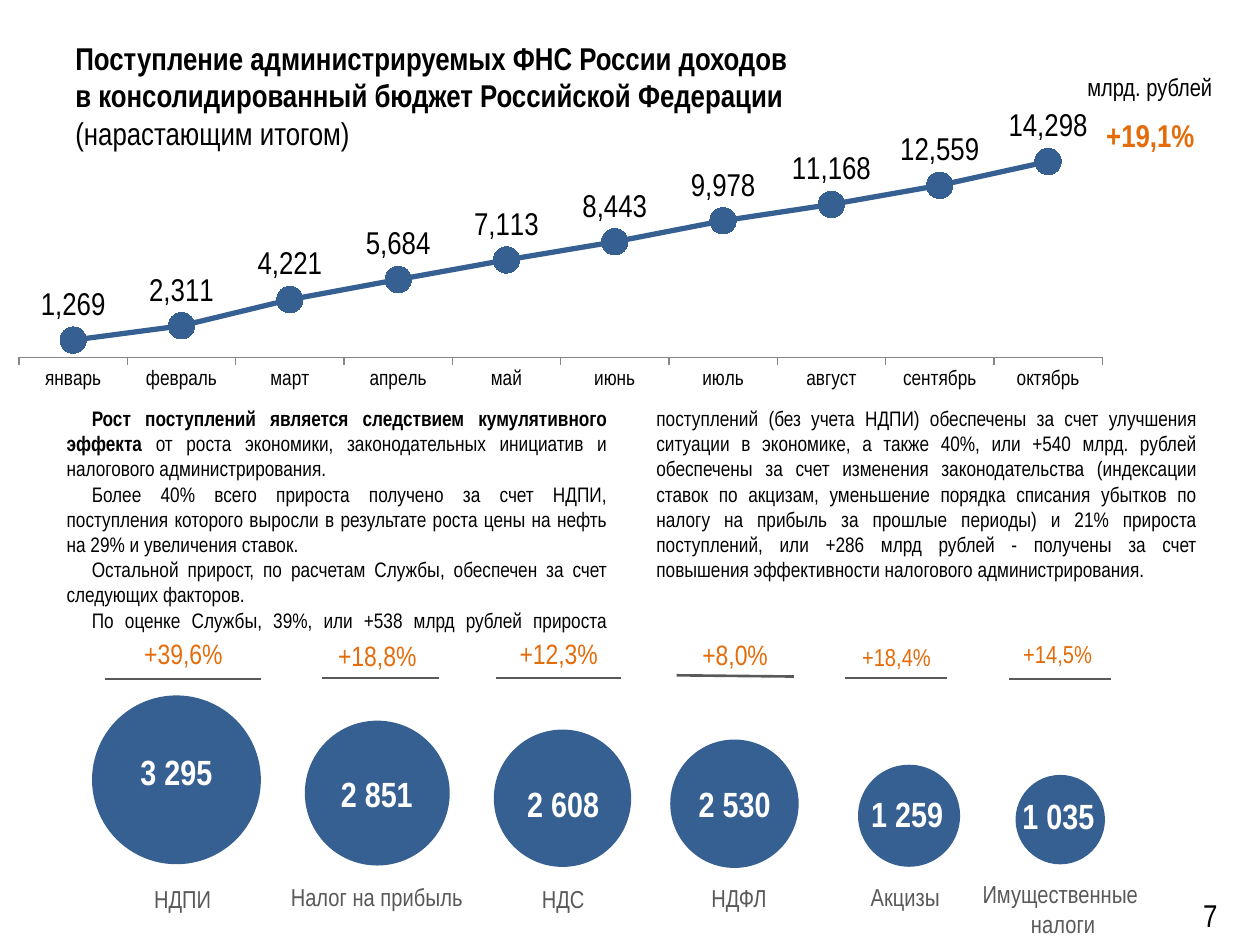
from dataclasses import dataclass

from lxml import etree
from pptx import Presentation
from pptx.chart.data import CategoryChartData
from pptx.dml.color import RGBColor
from pptx.enum.chart import (XL_CHART_TYPE, XL_LABEL_POSITION,
                             XL_MARKER_STYLE, XL_TICK_MARK)
from pptx.enum.shapes import MSO_CONNECTOR, MSO_SHAPE
from pptx.enum.text import MSO_ANCHOR, MSO_AUTO_SIZE, PP_ALIGN
from pptx.oxml import parse_xml
from pptx.oxml.ns import nsdecls, qn
from pptx.util import Pt

LINE = XL_CHART_TYPE.LINE_MARKERS_STACKED
ABOVE = XL_LABEL_POSITION.ABOVE
ROUND = XL_MARKER_STYLE.CIRCLE
OUT, NONE = XL_TICK_MARK.OUTSIDE, XL_TICK_MARK.NONE
STRAIGHT = MSO_CONNECTOR.STRAIGHT
OVAL = MSO_SHAPE.OVAL
TOP, MIDDLE = MSO_ANCHOR.TOP, MSO_ANCHOR.MIDDLE
GROW, FIXED = MSO_AUTO_SIZE.SHAPE_TO_FIT_TEXT, MSO_AUTO_SIZE.NONE
LEFT, CENTER, JUSTIFY = PP_ALIGN.LEFT, PP_ALIGN.CENTER, PP_ALIGN.JUSTIFY


@dataclass
class Theme:
    font: str = "Arial Narrow"
    ink: str = "000000"
    blue: str = "376092"
    gray: str = "595959"
    accent: str = "E46C0A"
    white: str = "FFFFFF"
    small: int = 12
    label: int = 14
    rate: int = 16
    head: int = 18
    value: int = 20


def rgb(code):
    return RGBColor.from_string(code)


def assign(target, values):
    for key, value in values.items():
        setattr(target, key, value)


class Board:
    def __init__(self, slide, theme):
        self.slide, self.theme = slide, theme

    def style(self, font, size, color, bold=False):
        assign(font, {"name": self.theme.font, "size": Pt(size), "bold": bold})
        font.color.rgb = rgb(color)

    def text(self, box, paras, size, color, bold=False, align=LEFT,
             anchor=TOP, wrap=False, fit=GROW, pad=(7.2, 3.6)):
        """Each paragraph is a string or a list of (text, bold) runs."""
        frame = self.slide.shapes.add_textbox(*map(Pt, box)).text_frame
        across, down = map(Pt, pad)
        assign(frame, {"word_wrap": wrap, "auto_size": fit,
                       "vertical_anchor": anchor,
                       "margin_left": across, "margin_right": across,
                       "margin_top": down, "margin_bottom": down})
        for i, runs in enumerate(paras):
            para = frame.add_paragraph() if i else frame.paragraphs[0]
            para.alignment = align
            for words, strong in [(runs, bold)] if isinstance(runs, str) else runs:
                for j, part in enumerate(words.split("\n")):
                    if j:
                        para.add_line_break()
                    if part:
                        run = para.add_run()
                        run.text = part
                        self.style(run.font, size, color, strong)
        return frame

    def label(self, mid, top, width, height, paras, size, color):
        self.text((mid - width / 2, top, width, height), paras, size, color,
                  align=CENTER)

    def circle(self, left, top, size):
        disc = self.slide.shapes.add_shape(OVAL, *map(Pt, (left, top, size, size)))
        disc.shadow.inherit = False
        disc.fill.solid()
        disc.fill.fore_color.rgb = rgb(self.theme.blue)
        disc.line.fill.background()

    def rule(self, *ends):
        line = self.slide.shapes.add_connector(STRAIGHT, *map(Pt, ends))
        line.line.color.rgb = rgb(self.theme.gray)
        line.line.width = Pt(1.5)
        etree.SubElement(line._element.spPr, qn("a:effectLst"))

    def chart(self, box, names, values):
        look = self.theme
        data = CategoryChartData(number_format="#,##0")
        data.categories = names
        data.add_series("Series 1", values)
        chart = self.slide.shapes.add_chart(LINE, *map(Pt, box), data).chart
        assign(chart, {"has_legend": False, "has_title": False})
        self.style(chart.font, look.head, look.ink)

        # Axes
        axis = chart.value_axis
        assign(axis, {"visible": False, "has_major_gridlines": False,
                      "minimum_scale": -200, "maximum_scale": 16000})
        axis = chart.category_axis
        assign(axis, {"major_tick_mark": OUT, "minor_tick_mark": NONE})
        self.style(axis.tick_labels.font, look.small, look.ink)
        axis.format.line.color.rgb = rgb("868686")

        # Series and labels
        plot = chart.plots[0]
        plot.vary_by_categories = False
        series = plot.series[0]
        series.smooth = False
        series.format.line.color.rgb = rgb(look.blue)
        series.format.line.width = Pt(3)
        assign(series.marker, {"style": ROUND, "size": 15})
        mark = series.marker.format
        mark.fill.solid()
        mark.fill.fore_color.rgb = rgb(look.blue)
        mark.line.color.rgb = rgb(look.white)
        labels = series.data_labels
        assign(labels, {"show_value": True, "position": ABOVE,
                        "number_format": "#,##0",
                        "number_format_is_linked": False})
        self.style(labels.font, look.head, look.ink)

        # Plot area
        area = chart._chartSpace.chart.plotArea
        for old in area.findall(qn("c:layout")):
            area.remove(old)
        sizes = {"x": 0.017, "y": 0.1, "w": 0.966, "h": 0.773}
        parts = '<c:layoutTarget val="inner"/><c:xMode val="edge"/><c:yMode val="edge"/>'
        parts += "".join(f'<c:{k} val="{v}"/>' for k, v in sizes.items())
        area.insert(0, parse_xml(f'<c:layout {nsdecls("c")}><c:manualLayout>'
                                 f'{parts}</c:manualLayout></c:layout>'))


MONTHS = ["январь", "февраль", "март", "апрель", "май", "июнь", "июль",
          "август", "сентябрь", "октябрь"]
INCOME = [1269, 2311, 4221, 5684, 7113, 8443, 9978, 11168, 12559, 14298]

BODY = [
    [("Рост поступлений является следствием кумулятивного эффекта", True),
     (" от роста экономики, законодательных инициатив и налогового "
      "администрирования.", False)],
    "Более 40% всего прироста получено за счет НДПИ, поступления которого "
    "выросли в результате роста цены на нефть на 29% и увеличения ставок.",
    "Остальной прирост, по расчетам Службы, обеспечен за счет следующих факторов.",
    "По оценке Службы, 39%, или +538 млрд рублей прироста поступлений (без учета "
    "НДПИ) обеспечены за счет улучшения ситуации в экономике, а также 40%, или "
    "+540 млрд. рублей обеспечены за счет изменения законодательства (индексации "
    "ставок по акцизам, уменьшение порядка списания убытков по налогу на прибыль "
    "за прошлые периоды) и 21% прироста поступлений, или +286 млрд рублей - "
    "получены за счет повышения эффективности налогового администрирования.",
]

# Circle; value (text, centre, size); rate (text, centre, top, width, type);
# name (lines, centre, top, width); rule ends
TAXES = [
    ((52.6, 397.4, 96.5), ("3 295", 100.8, 440.7, 70.6, 70.6),
     ("+39,6%", 104.8, 360, 59.8, 16), (["НДПИ"], 104.4, 501.8, 47.5),
     (59.8, 388.1, 149, 388.1)),
    ((174.2, 411.8, 82.8), ("2 851", 215.3, 453.6, 70.6, 70.6),
     ("+18,8%", 215.6, 361.4, 59.8, 16),
     (["Налог на прибыль"], 215.3, 500.4, 113.8),
     (184.3, 387.4, 250.6, 387.4)),
    ((282.2, 416.9, 78.5), ("2 608", 321.8, 459.4, 70.6, 70.6),
     ("+12,3%", 319.3, 360, 59.8, 16), (["НДС"], 321.8, 501.8, 38.9),
     (283.7, 387.4, 355, 387.4)),
    ((383, 422.6, 73.4), ("2 530", 419.8, 459.4, 70.6, 70.6),
     ("+8,0%", 420.1, 360.7, 52.6, 16), (["НДФЛ"], 422.3, 501.1, 46.8),
     (386.6, 385.9, 453.6, 386.6)),
    ((490.3, 437, 58.3), ("1 259", 518.4, 465.1, 70.6, 70.6),
     ("+18,4%", 512.3, 363.6, 54, 14), (["Акцизы"], 517.3, 500.4, 54),
     (483.1, 387.4, 541.4, 387.4)),
    ((580.3, 442.8, 51.1), ("1 035", 604.8, 465.8, 56.2, 63.4),
     ("+14,5%", 604.4, 361.4, 54, 14),
     (["Имущественные", " налоги"], 605.9, 499, 104.4),
     (576.7, 388.1, 635, 388.1)),
]


def main():
    deck = Presentation()
    assign(deck, {"slide_width": Pt(720), "slide_height": Pt(540)})
    look = Theme()
    board = Board(deck.slides.add_slide(deck.slide_layouts[6]), look)

    # Title and chart
    board.text((36, 9.4, 648, 90), [[
        ("Поступление администрируемых ФНС России доходов \n"
         "в консолидированный бюджет Российской Федерации\n", True),
        ("(нарастающим итогом)", False)]],
        look.head, look.ink, anchor=MIDDLE, wrap=True, fit=FIXED)
    board.chart((0, 62.6, 640.8, 164.2), MONTHS, INCOME)

    # Taxes
    for disc, value, rate, name, ends in TAXES:
        board.circle(*disc)
        words, mid, level, width, height = value
        board.text((mid - width / 2, level - height / 2, width, height),
                   [words], look.value, look.white, bold=True, align=CENTER,
                   anchor=MIDDLE, fit=FIXED, pad=(7.9, 4.3))
        words, mid, top, width, size = rate
        board.label(mid, top, width, 26.6 if size == look.rate else 24.5,
                    [words], size, look.accent)
        lines, mid, top, width = name
        board.label(mid, top, width, 7.7 + 16.8 * len(lines), lines,
                    look.label, look.gray)
        board.rule(*ends)

    # Unit and total growth
    board.text((614.2, 37.4, 87.8, 24.5), ["млрд. рублей"], look.label, look.ink)
    board.text((625, 62.6, 65.5, 28.8), ["+19,1%"], look.head, look.accent,
               bold=True)

    # Two-column commentary
    frame = board.text((31, 228.2, 660.2, 138.2), BODY, look.small, look.ink,
                       align=JUSTIFY, wrap=True)
    columns = frame._txBody.bodyPr
    columns.set("numCol", "2")
    columns.set("spcCol", str(Pt(28)))
    for para in frame.paragraphs:
        para._p.get_or_add_pPr().set("indent", str(Pt(14.4)))

    # Page number
    frame = board.text((663.1, 491, 56.9, 54.7), ["7"], look.head, look.ink,
                       align=CENTER, anchor=MIDDLE, wrap=True, fit=FIXED,
                       pad=(7.9, 4.3))
    frame.paragraphs[0].line_spacing = Pt(30.1)

    deck.save("out.pptx")


if __name__ == "__main__":
    main()
